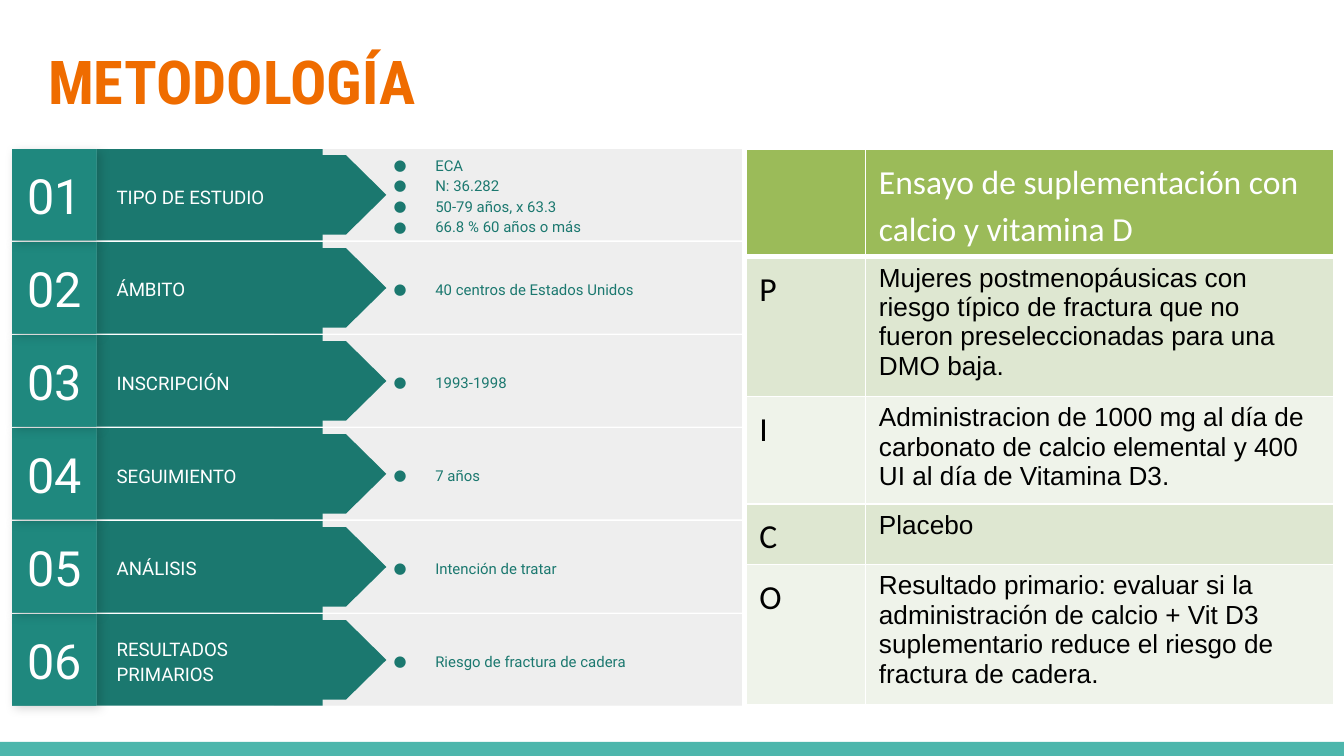
from lxml import etree
from pptx import Presentation
from pptx.dml.color import RGBColor
from pptx.enum import shapes, text
from pptx.oxml import ns
from pptx.util import Inches, Pt

# Content
TITLE = "METODOLOGÍA"
STEPS = [
    ("TIPO DE ESTUDIO",
     ["ECA", "N: 36.282", "50-79 años, x 63.3", "66.8 % 60 años o más"]),
    ("ÁMBITO", ["40 centros de Estados Unidos"]),
    ("INSCRIPCIÓN", ["1993-1998"]),
    ("SEGUIMIENTO", ["7 años"]),
    ("ANÁLISIS", ["Intención de tratar"]),
    ("RESULTADOS PRIMARIOS", ["Riesgo de fractura de cadera"]),
]
PICO = [
    ("", "Ensayo de suplementación con calcio y vitamina D"),
    ("P", "Mujeres postmenopáusicas con riesgo típico de fractura que no "
          "fueron preseleccionadas para una DMO baja."),
    ("I", "Administracion de 1000 mg al día de carbonato de calcio elemental "
          "y 400 UI al día de Vitamina D3."),
    ("C", "Placebo"),
    ("O", "Resultado primario: evaluar si la administración de calcio + Vit D3 "
          "suplementario reduce el riesgo de fractura de cadera."),
]
COLS = [0.89, 3.48]
ROWS = [0.8, 1.04, 0.8, 0.45, 1.04]

# Layout and colours
TOP, HIGH = 1.11, 0.68
PITCH = (4.57 - TOP) / (len(STEPS) - 1)
WHITE, BLACK, TEAL = "FFFFFF", "000000", "1B786F"
RECT = shapes.MSO_SHAPE.RECTANGLE
ARROW = shapes.MSO_SHAPE.FLOWCHART_OFFPAGE_CONNECTOR

# A 16:9 page
deck = Presentation()
deck.slide_width = Inches(10)
deck.slide_height = deck.slide_width * 9 // 16
slide = deck.slides.add_slide(deck.slide_layouts[6])


def paint(fill, color):
    fill.solid()
    fill.fore_color.rgb = RGBColor.from_string(color)


def add_xml(parent, tag, **attrs):
    return etree.SubElement(parent, ns.qn(tag), attrs)


def add_color(parent, color):
    return add_xml(parent, "a:srgbClr", val=color)


def block(x, y, w, h, color, kind=RECT):
    shape = slide.shapes.add_shape(kind, Inches(x), Inches(y), Inches(w), Inches(h))
    shape.shadow.inherit = False
    paint(shape.fill, color)
    shape.line.fill.background()
    return shape


def label(x, y, w, h):
    return slide.shapes.add_textbox(Inches(x), Inches(y), Inches(w), Inches(h))


def write(frame, lines, size, font, color, bold=False, space=None, align=None):
    frame.text = "\n".join(lines)
    frame.word_wrap = True
    for para in frame.paragraphs:
        para.alignment = align
        if space:
            para.line_spacing = space
        for run in para.runs:
            run.font.size, run.font.name, run.font.bold = Pt(size), font, bold
            run.font.color.rgb = RGBColor.from_string(color)


def center(frame):
    frame.vertical_anchor = text.MSO_ANCHOR.MIDDLE
    frame.margin_left = frame.margin_right = Inches(0.1)
    frame.margin_top = frame.margin_bottom = Inches(0.1)


def bullets(frame):
    for para in frame.paragraphs:
        props = para._p.get_or_add_pPr()
        props.set("marL", str(Inches(0.5)))
        props.set("indent", str(Inches(-0.31)))
        add_color(add_xml(props, "a:buClr"), TEAL)
        add_xml(props, "a:buFont", typeface="Roboto")
        add_xml(props, "a:buChar", char="●")


def cast(shape):
    effects = shape._element.spPr.find(ns.qn("a:effectLst"))
    shade = add_xml(effects, "a:outerShdw", blurRad=str(Pt(5.6)), dist=str(Pt(2.2)),
                    dir="2700000", algn="tl", rotWithShape="0")
    add_xml(add_color(shade, BLACK), "a:alpha", val="17000")


def border(cell, widths):
    props = cell._tc.get_or_add_tcPr()
    for side, width in zip("LRTB", widths):
        line = add_xml(props, "a:ln" + side, w=str(Pt(width)))
        add_color(add_xml(line, "a:solidFill"), WHITE)


# Footer band and title
block(0, 5.52, 10, 0.11, "4DB6AC")
title = label(0.26, 0.23, 9.32, 0.77).text_frame
center(title)
title.vertical_anchor = text.MSO_ANCHOR.TOP
write(title, [TITLE], 32.4, "Roboto Condensed", "EF6C00", bold=True)

# Steps, from the bottom up so that each shadow falls on the row below
for i, (name, facts) in reversed(list(enumerate(STEPS))):
    y = TOP + i * PITCH
    block(2.04, y, 3.48, HIGH, "EEEEEE")
    block(0.72, y, 1.68, HIGH, TEAL)
    arrow = block(1.83, y + HIGH / 2 - 0.75, 0.59, 1.5, TEAL, ARROW)
    arrow.rotation = 270
    head = label(0.77, y + 0.08, 1.77, 0.52).text_frame
    center(head)
    write(head, [name], 10, "Roboto", WHITE, space=1.15)
    cast(block(0.09, y, 0.63, HIGH, "1D7E75"))
    num = block(0.09, y, 0.63, HIGH, "1F887E").text_frame
    center(num)
    write(num, [f"{i + 1:02}"], 26, "Roboto", WHITE, align=text.PP_ALIGN.CENTER)
    note = label(2.64, y, 2.71, HIGH).text_frame
    center(note)
    write(note, facts, 8, "Roboto", TEAL, space=1.15)
    bullets(note)

# PICO table
grid = slide.shapes.add_table(len(ROWS), len(COLS), Inches(5.55), Inches(TOP),
                              Inches(sum(COLS)), Inches(sum(ROWS))).table
for col, width in zip(grid.columns, COLS):
    col.width = Inches(width)
for r, (row, high) in enumerate(zip(PICO, ROWS)):
    grid.rows[r].height = Inches(high)
    for c, words in enumerate(row):
        cell = grid.cell(r, c)
        border(cell, (0.75, 0.75, 3 if r == 1 else 0.75, 3 if r == 0 else 0.75))
        paint(cell.fill, "9BBB59" if r == 0 else "DEE7D1" if r % 2 else "EFF3EA")
        cell.margin_left = cell.margin_right = Inches(0.1)
        cell.margin_top = cell.margin_bottom = Inches(0.05)
        if r == 0 or c == 0:
            write(cell.text_frame, [words], 18, "Calibri",
                  BLACK if r else WHITE, space=1.15)
        else:
            write(cell.text_frame, [words], 14, "Arial", BLACK)

deck.save("out.pptx")
